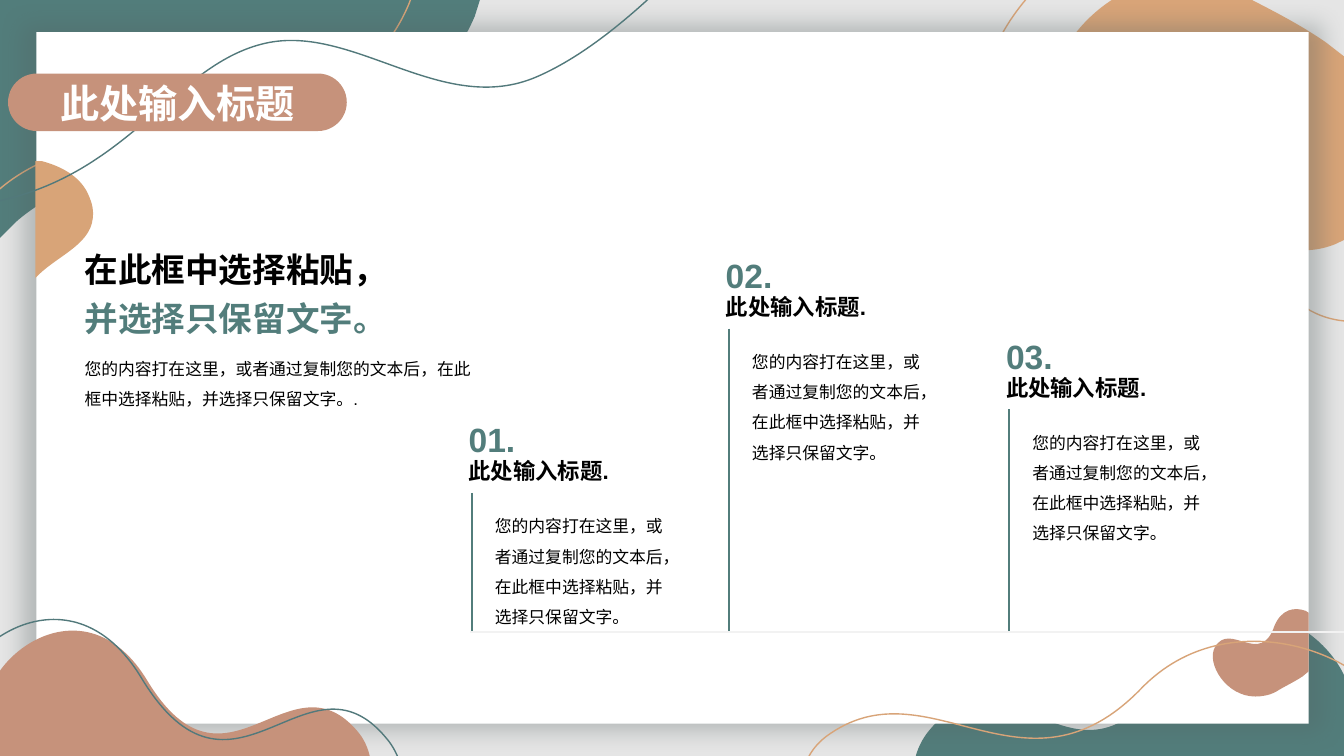
import pptx
import pptx.util
import pptx.dml.color
import pptx.enum.shapes
import pptx.enum.text
import pptx.oxml
import pptx.oxml.ns
import lxml.etree

Inches = pptx.util.Inches
Pt = pptx.util.Pt
RGB = pptx.dml.color.RGBColor
SHAPES = pptx.enum.shapes.MSO_SHAPE
ALIGN = pptx.enum.text.PP_ALIGN
ANCHOR = pptx.enum.text.MSO_ANCHOR
AUTO_SIZE = pptx.enum.text.MSO_AUTO_SIZE
qn = pptx.oxml.ns.qn

TEAL = RGB(0x52, 0x7D, 0x7B)
DARK_TEAL = RGB(0x52, 0x79, 0x7B)
ORANGE = RGB(0xD8, 0xA4, 0x78)
CLAY = RGB(0xC6, 0x92, 0x7B)
GREY = RGB(0x80, 0x80, 0x80)
PALE = RGB(0xF2, 0xF2, 0xF2)
WHITE = RGB(0xFF, 0xFF, 0xFF)
BLACK = RGB(0, 0, 0)

BODY = "您的内容打在这里，或者通过复制您的文本后，在此框中选择粘贴，并选择只保留文字。"
HEADING = "此处输入标题"

BLOBS_BEHIND = [
    (TEAL, None, True, (13.34, 7.51), [
        (13.4, 7.33, 13.43, 7.14, 13.4, 6.92), (13.31, 6.29, 12.24, 5.56, 11.59, 6.65),
        (10.71, 8.1, 10, 6.31, 9.23, 7.23), (9.16, 7.31, 9.11, 7.4, 9.08, 7.51)]),
    (TEAL, None, True, (0, 0), [
        (4.76, 0), (4.71, 0.16), (4.4, 0.89, 3.65, 1.46, 2.25, 1.55),
        (1.19, 1.62, 0.54, 1.86, 0.15, 2.21), (0, 2.36)]),
    (ORANGE, None, True, (11.69, -0.21), [
        (10.8, -0.19, 10.18, 0.81, 10.47, 1.3), (10.93, 2.12, 11.84, 0.68, 12.3, 1.96),
        (12.49, 2.49, 12.9, 2.56, 13.25, 2.42), (13.33, 2.38), (13.33, 0.56), (13.15, 0.42),
        (12.86, 0.22, 12.55, 0.07, 12.34, -0.04), (12.12, -0.16, 11.9, -0.21, 11.69, -0.21)]),
    (None, ORANGE, True, (11.61, -0.72), [
        (10.31, -0.7, 9.42, 0.76, 9.83, 1.48), (10.51, 2.67, 11.82, 0.57, 12.49, 2.42),
        (12.77, 3.2, 13.36, 3.3, 13.87, 3.1), (13.99, 3.04), (13.99, 0.39), (13.73, 0.19),
        (13.31, -0.1, 12.85, -0.32, 12.56, -0.48), (12.22, -0.65, 11.9, -0.73, 11.61, -0.72)]),
    (None, ORANGE, True, (-0.15, -0.11), [
        (4.11, -0.11), (4.06, 0.03), (3.79, 0.69, 3.11, 1.21, 1.86, 1.29),
        (0.91, 1.36, 0.33, 1.58, -0.02, 1.89), (-0.15, 2.03)]),
]
BLOBS_IN_FRONT = [
    (CLAY, None, True, (-0.08, 7.51), [
        (-0.15, 7.35, -0.17, 7.18, -0.14, 6.99), (-0.07, 6.43, 0.88, 5.79, 1.46, 6.75),
        (2.24, 8.04, 2.87, 6.45, 3.55, 7.26), (3.61, 7.33, 3.65, 7.42, 3.67, 7.51)]),
    (ORANGE, None, True, (0.92, 2.17), [
        (0.89, 2.44, 0.54, 2.55, 0.35, 2.76), (0.35, 2.77), (0.35, 1.6), (0.42, 1.6),
        (0.64, 1.66, 0.81, 1.77, 0.88, 1.94), (0.92, 2.03, 0.93, 2.1, 0.92, 2.17)]),
    (None, DARK_TEAL, True, (-0.41, 7.61), [
        (-0.48, 7.43, -0.51, 7.22, -0.48, 7), (-0.39, 6.35, 0.72, 5.6, 1.4, 6.72),
        (2.31, 8.23, 3.04, 6.37, 3.83, 7.32), (3.9, 7.4, 3.95, 7.5, 3.98, 7.61)]),
    (None, DARK_TEAL, False, (-4.79, 2.32), [
        (-2.97, 2.3, -1.14, 2.28, 0.09, 1.97), (1.33, 1.65, 1.76, 0.63, 2.63, 0.43),
        (3.51, 0.23, 4.39, 1.17, 5.33, 0.76), (6.27, 0.35, 7.28, -0.85, 8.28, -2.05)]),
    (CLAY, None, True, (12.45, 6.91), [
        (12.16, 6.91, 11.96, 6.58, 12.05, 6.42), (12.2, 6.16, 12.5, 6.62, 12.64, 6.21),
        (12.71, 6.04, 12.84, 6.02, 12.95, 6.06), (12.98, 6.08), (12.98, 6.66), (12.92, 6.71),
        (12.83, 6.77, 12.72, 6.82, 12.66, 6.86), (12.59, 6.9, 12.51, 6.91, 12.45, 6.91)]),
    (None, ORANGE, True, (13.65, 7.55), [
        (13.74, 7.4, 13.78, 7.24, 13.74, 7.05), (13.62, 6.53, 12.2, 5.92, 11.32, 6.83),
        (10.15, 8.04, 9.21, 6.55, 8.19, 7.31), (8.1, 7.38, 8.04, 7.46, 8, 7.55)]),
]


def paint(shape, fill=None, line=None):
    shape.shadow.inherit = False
    if fill is None:
        shape.fill.background()
    else:
        shape.fill.solid()
        shape.fill.fore_color.rgb = fill
    if line is None:
        shape.line.fill.background()
    else:
        shape.line.color.rgb = line
        shape.line.width = Pt(1)


def add_panel(slide, box, fill, kind=SHAPES.RECTANGLE):
    panel = slide.shapes.add_shape(kind, *map(Inches, box))
    paint(panel, fill)
    return panel


def add_rule(slide, start, end, color):
    rule = slide.shapes.add_connector(
        pptx.enum.shapes.MSO_CONNECTOR.STRAIGHT, *map(Inches, start + end))
    rule.line.color.rgb = color
    rule.line.width = Pt(1.25)
    lxml.etree.SubElement(rule._element.spPr, qn("a:effectLst"))


def add_text(slide, box, lines, size, colors=(BLACK,), bold=False, wrap=True,
             align=ALIGN.LEFT, anchor=ANCHOR.TOP, spacing=1.0, grow=True):
    frame = slide.shapes.add_textbox(*map(Inches, box)).text_frame
    frame.word_wrap = wrap
    frame.vertical_anchor = anchor
    frame.auto_size = AUTO_SIZE.SHAPE_TO_FIT_TEXT if grow else AUTO_SIZE.NONE
    for index, (line, color) in enumerate(zip(lines, colors)):
        paragraph = frame.add_paragraph() if index else frame.paragraphs[0]
        paragraph.alignment = align
        paragraph.line_spacing = spacing
        run = paragraph.add_run()
        run.text = line
        run.font.name = "Arial"
        run.font.size = Pt(size)
        run.font.bold = bold
        run.font.color.rgb = color


def curve_extent(start, steps, axis):
    values, last = [start[axis]], start[axis]
    for step in steps:
        a, b, c, d = (last, *step[axis::2]) if len(step) == 6 else (last, last, *step[axis::2] * 2)
        for t in (i / 50 for i in range(1, 51)):
            u = 1 - t
            values.append(a * u ** 3 + 3 * b * t * u * u + 3 * c * t * t * u + d * t ** 3)
        last = d
    return min(values), max(values)


def add_blob(slide, origin, fill, line, closed, start, steps):
    (left, right), (top, bottom) = (curve_extent(start, steps, axis) for axis in (0, 1))
    builder = slide.shapes.build_freeform(*map(Inches, start))
    builder.add_line_segments([tuple(map(Inches, step[-2:])) for step in steps], close=closed)
    blob = builder.convert_to_shape()
    blob.left, blob.top = Inches(origin[0] + left), Inches(origin[1] + top)
    blob.width, blob.height = Inches(right - left), Inches(bottom - top)
    outline = blob._element.spPr.find(".//" + qn("a:path"))
    outline.set("w", str(blob.width))
    outline.set("h", str(blob.height))
    for segment, step in zip(list(outline), [start] + steps):
        if len(step) == 6:
            segment_curve = lxml.etree.Element(qn("a:cubicBezTo"))
            outline.replace(segment, segment_curve)
            segment = segment_curve
        for point in list(segment):
            segment.remove(point)
        for x, y in zip(step[::2], step[1::2]):
            lxml.etree.SubElement(segment, qn("a:pt"),
                                  x=str(Inches(x - left)), y=str(Inches(y - top)))
    paint(blob, fill, line)


def add_glow(panel):
    effects = panel._element.spPr.find(qn("a:effectLst"))
    effects.append(pptx.oxml.parse_xml(
        f'<a:outerShdw {pptx.oxml.ns.nsdecls("a")} blurRad="{Pt(17)}" sx="102000" sy="102000" '
        'algn="ctr" rotWithShape="0"><a:srgbClr val="566363"><a:alpha val="35000"/>'
        '</a:srgbClr></a:outerShdw>'))


def draw_backdrop(slide, box):
    left, top, width, height = box
    wash = add_panel(slide, box, GREY)
    tint = wash._element.spPr.find(".//" + qn("a:srgbClr"))
    lxml.etree.SubElement(tint, qn("a:alpha"), val="20000")
    for blob in BLOBS_BEHIND:
        add_blob(slide, box[:2], *blob)
    add_glow(add_panel(slide, (left + 0.36, top + 0.32, width - 0.71, height - 0.64), WHITE))
    for blob in BLOBS_IN_FRONT:
        add_blob(slide, box[:2], *blob)


def draw_header(slide, box):
    left, top, width, height = box
    add_panel(slide, box, CLAY, SHAPES.ROUNDED_RECTANGLE).adjustments[0] = 0.5
    add_text(slide, (left + 0.29, top + 0.01, width - 0.58, height), [HEADING], 28,
             [WHITE], bold=True, align=ALIGN.CENTER)


def draw_intro(slide, box):
    left, top, width, height = box
    add_text(slide, (left, top + 1.37, 4.19, 0.67), [BODY + "."], 12, spacing=1.5)
    add_text(slide, (left, top, width, 1.36), ["在此框中选择粘贴，", "并选择只保留文字。"], 24,
             [BLACK, TEAL], bold=True, anchor=ANCHOR.BOTTOM, spacing=1.2, grow=False)


def draw_column(slide, box, number):
    left, top, width, height = box
    add_rule(slide, (left + 0.13, top + 0.78), (left + 0.13, top + height), TEAL)
    add_text(slide, (left, top + 0.38, 1.64, 0.37), [HEADING + "."], 16, bold=True, wrap=False)
    add_text(slide, (left, top, 0.67, 0.5), [f"{number:02d}."], 24, [TEAL], bold=True, wrap=False)
    add_text(slide, (left + 0.26, top + 0.86, width - 0.26, 1.28), [BODY], 12, spacing=1.5)


def main():
    deck = pptx.Presentation()
    deck.slide_width, deck.slide_height = Inches(13.33), Inches(7.5)
    slide = deck.slides.add_slide(deck.slide_layouts[6])
    baseline = 6.27
    draw_backdrop(slide, (0, 0, 13.33, 7.5))
    draw_header(slide, (0.08, 0.73, 3.36, 0.57))
    draw_intro(slide, (0.74, 2.04, 5.07, 2.04))
    for number, (left, top) in enumerate([(4.55, 4.11), (7.1, 2.48), (9.88, 3.28)], 1):
        draw_column(slide, (left, top, 2.17, baseline - top), number)
    add_rule(slide, (13.33, baseline), (4.66, baseline), PALE)
    deck.save("out.pptx")


if __name__ == "__main__":
    main()
